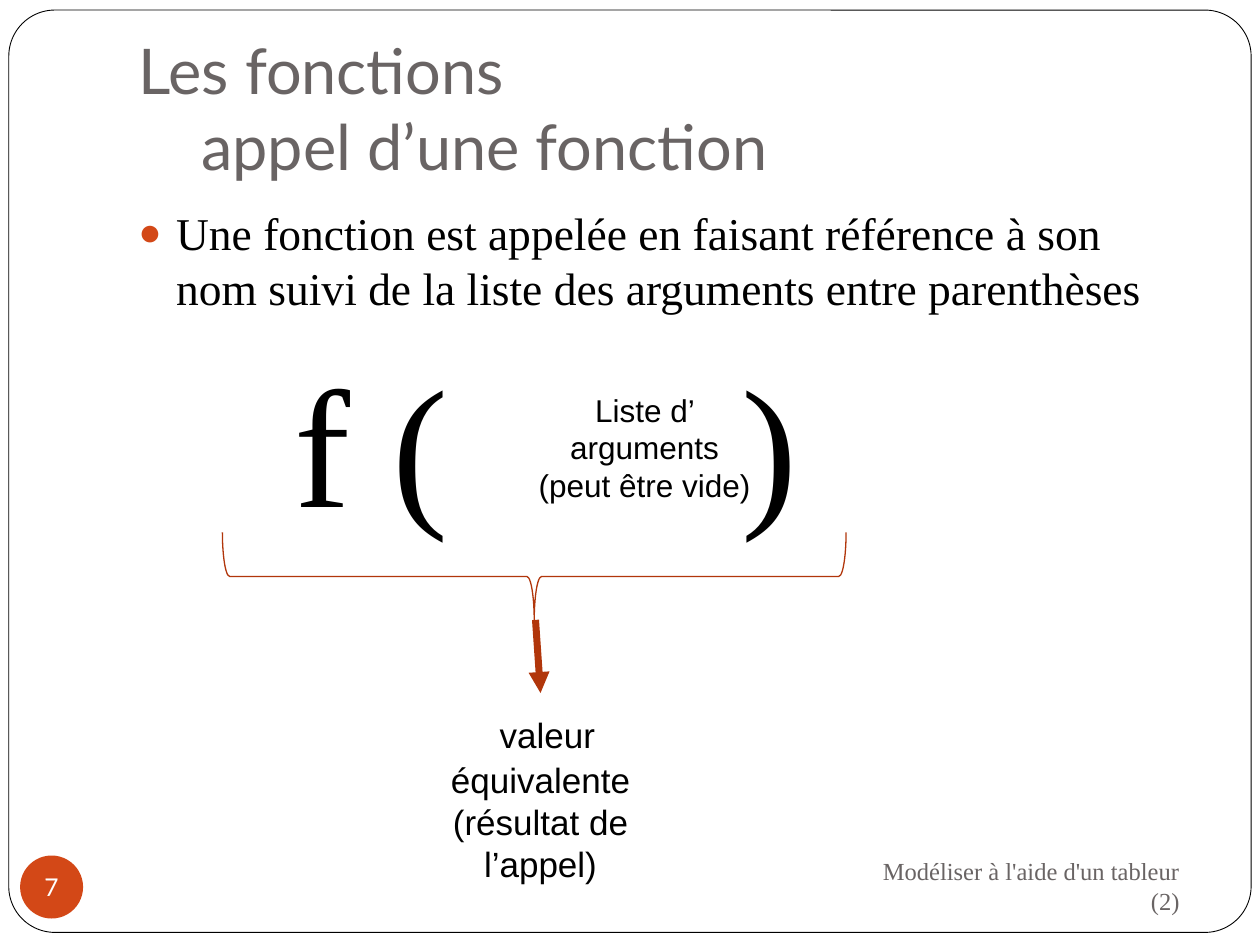
from lxml import etree
from pptx import Presentation
from pptx.dml.color import RGBColor
from pptx.enum.shapes import MSO_CONNECTOR as Connector, MSO_SHAPE as Shape
from pptx.enum.text import MSO_ANCHOR as Anchor, PP_ALIGN as Align
from pptx.oxml.ns import qn
from pptx.util import Inches, Pt

COLORS = {"paper": "FFFFFF", "ink": "000000", "gray": "696464",
          "orange": "D34817", "rust": "B1360B"}
SERIF, SANS, HEAD = "Times New Roman", "Arial", "Lato"

# Text boxes: place (left, top, width, height), runs (text, size), look
TEXTS = {
    "title": dict(place=(1, 0.3, 8.5, 1.25), font=HEAD, color="gray",
                  runs=[("Les fonctions\v\tappel d’une fonction", 36)],
                  frame={"vertical_anchor": Anchor.BOTTOM,
                         "margin_bottom": Inches(0.1)}),
    "rule": dict(place=(1, 1.58, 8.5, 1.1), font=SERIF,
                 runs=[("Une fonction est appelée en faisant référence à son "
                        "nom suivi de la liste des arguments entre parenthèses", 26)],
                 para={"space_before": Pt(5.8)}),
    "footer": dict(place=(6.75, 6.77, 2.71, 0.52), font=SERIF, color="gray",
                   runs=[("Modéliser à l'aide d'un tableur (2)", 14)],
                   frame={"vertical_anchor": Anchor.MIDDLE},
                   para={"alignment": Align.RIGHT}),
    "call": dict(place=(2.24, 2.83, 5.75, 1.33), font=SERIF,
                 runs=[("f (\t)", 96)],
                 frame={"vertical_anchor": Anchor.MIDDLE}),
    "result": dict(place=(3.43, 5.5, 1.72, 1.58), font=SANS,
                   runs=[(" ", 28), ("valeur équivalente (résultat de l’appel)", 20)],
                   para={"alignment": Align.CENTER}),
    "arguments": dict(place=(4.14, 3.05, 1.95, 1.09), font=SANS,
                      runs=[("Liste d’ arguments (peut être vide)", 18)],
                      para={"alignment": Align.CENTER}),
}
PAGE_NUMBER = ("7", 14)
CLOSING_TAB = 3.55  # where the closing parenthesis starts


def rgb(name):
    return RGBColor.from_string(COLORS[name])


def set_all(target, values):
    for name, value in values.items():
        setattr(target, name, value)


def write(box, runs, font, color="ink", frame=None, para=None):
    text_frame = box.text_frame
    set_all(text_frame, {"word_wrap": True, **(frame or {})})
    line = text_frame.paragraphs[0]
    set_all(line, para or {})
    for text, size in runs:
        for index, piece in enumerate(text.split("\v")):
            if index:
                line.add_line_break()
            span = line.add_run()
            span.text = piece
            set_all(span.font, {"name": font, "size": Pt(size)})
            span.font.color.rgb = rgb(color)
    return line


def add_text(page, place, **look):
    box = page.shapes.add_textbox(*map(Inches, place))
    write(box, **look)
    return box


def add_shape(page, kind, place, fill=None, line=None, width=0.75):
    shape = page.shapes.add_shape(kind, *map(Inches, place))
    shape.shadow.inherit = False
    if fill:
        shape.fill.solid()
        shape.fill.fore_color.rgb = rgb(fill)
    else:
        shape.fill.background()
    if line:
        shape.line.color.rgb = rgb(line)
        shape.line.width = Pt(width)
    else:
        shape.line.fill.background()
    return shape


def add_bullet(para):
    props = para._p.get_or_add_pPr()
    props.set("marL", str(Inches(0.3)))
    props.set("indent", str(-Inches(0.3)))
    color = etree.SubElement(props, qn("a:buClr"))
    etree.SubElement(color, qn("a:srgbClr"), val=COLORS["orange"])
    etree.SubElement(props, qn("a:buSzPct"), val="85000")
    etree.SubElement(props, qn("a:buFont"), typeface=SERIF)
    etree.SubElement(props, qn("a:buChar"), char="●")


def add_tab_stop(para, position):
    stops = etree.SubElement(para._p.get_or_add_pPr(), qn("a:tabLst"))
    etree.SubElement(stops, qn("a:tab"), pos=str(Inches(position)), algn="l")


def main():
    deck = Presentation()
    deck.slide_width, deck.slide_height = Inches(10), Inches(7.5)
    page = deck.slides.add_slide(deck.slide_layouts[6])

    # Page frame
    border = add_shape(page, Shape.ROUNDED_RECTANGLE, (0.07, 0.08, 9.86, 7.32),
                       "paper", "ink", 0.5)
    border.adjustments[0] = 0.05

    # Texts
    boxes = {name: add_text(page, **look) for name, look in TEXTS.items()}
    add_bullet(boxes["rule"].text_frame.paragraphs[0])
    add_tab_stop(boxes["call"].text_frame.paragraphs[0], CLOSING_TAB)

    # Page number
    badge = add_shape(page, Shape.OVAL, (0.16, 6.79, 0.5, 0.5), "orange")
    margins = {f"margin_{side}": 0 for side in ("left", "top", "right", "bottom")}
    write(badge, [PAGE_NUMBER], HEAD, "paper",
          {"word_wrap": False, "vertical_anchor": Anchor.MIDDLE, **margins},
          {"alignment": Align.CENTER})

    # Brace under the call, and arrow to its result
    brace = add_shape(page, Shape.LEFT_BRACE, (3.89, 2.1, 0.7, 4.95), line="rust")
    brace.rotation = 270
    arrow = page.shapes.add_connector(
        Connector.STRAIGHT, *map(Inches, (4.25, 4.92, 4.28, 5.5)))
    arrow.end_connect(boxes["result"], 0)
    arrow.line.color.rgb = rgb("rust")
    arrow.line.width = Pt(4)
    etree.SubElement(arrow.line._get_or_add_ln(), qn("a:tailEnd"), type="triangle")
    etree.SubElement(arrow._element.spPr, qn("a:effectLst"))

    deck.save("out.pptx")


if __name__ == "__main__":
    main()
